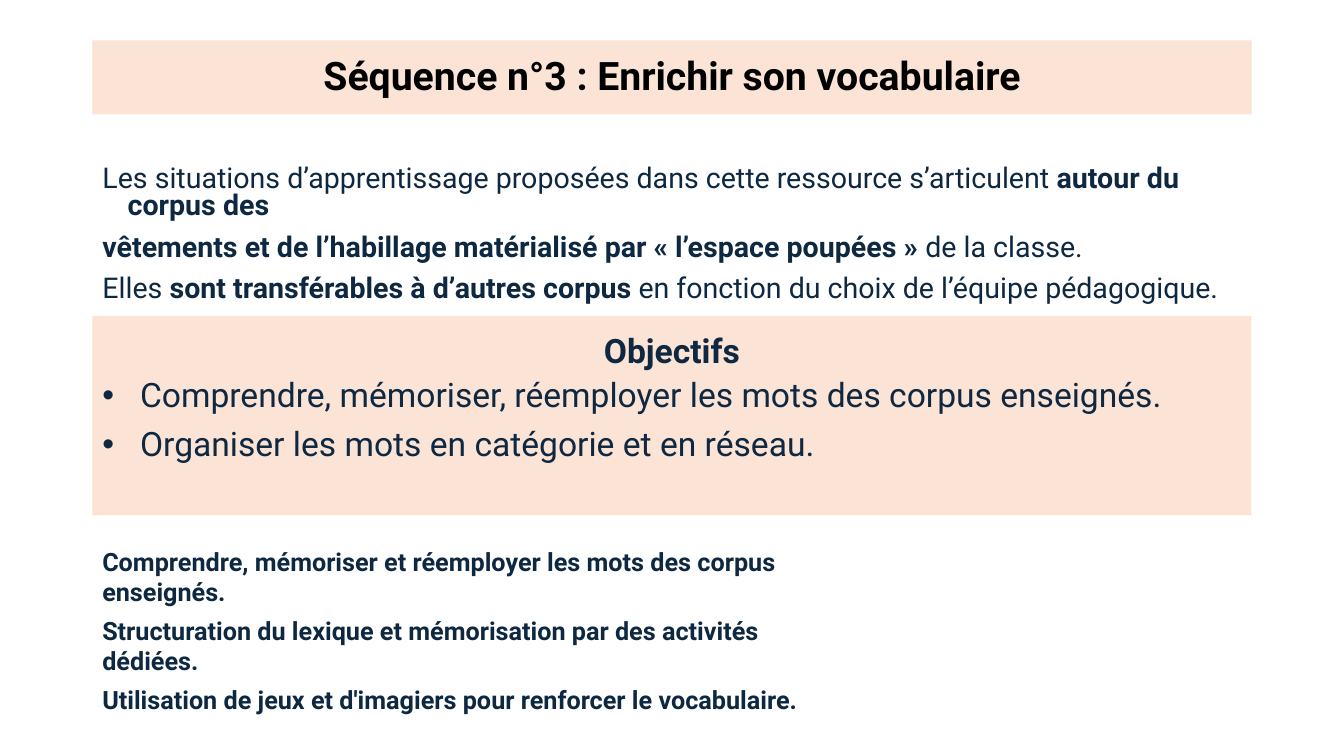
from dataclasses import dataclass
from pptx import Presentation
from pptx.dml.color import RGBColor
from pptx.enum.shapes import MSO_SHAPE
from pptx.enum.text import MSO_ANCHOR, MSO_AUTO_SIZE, PP_ALIGN
from pptx.oxml.xmlchemy import OxmlElement
from pptx.util import Pt

CENTER, LEFT = PP_ALIGN.CENTER, PP_ALIGN.LEFT
TOP, MIDDLE = MSO_ANCHOR.TOP, MSO_ANCHOR.MIDDLE
NO_AUTOFIT = MSO_AUTO_SIZE.NONE
RECTANGLE = MSO_SHAPE.RECTANGLE

# Content: each paragraph is a list of (text, bold) runs
TITLE = [("Séquence n°3 : Enrichir son vocabulaire", True)]
INTRO = [
    [("Les situations d’apprentissage proposées dans cette ressource s’articulent ", False),
     ("autour du corpus des", True)],
    [("vêtements et de l’habillage matérialisé par « l’espace poupées » ", True),
     ("de la classe.", False)],
    [("Elles ", False),
     ("sont transférables à d’autres corpus ", True),
     ("en fonction du choix de l’équipe pédagogique.", False)],
]
GOALS_HEADING = [("Objectifs", True)]
GOALS = [
    [("Comprendre, mémoriser, réemployer les mots des corpus enseignés.", False)],
    [("Organiser les mots en catégorie et en réseau.", False)],
]
METHODS = [
    [("Comprendre, mémoriser et réemployer les mots des corpus enseignés.", True)],
    [("Structuration du lexique et mémorisation par des activités dédiées.", True)],
    [("Utilisation de jeux et d'imagiers pour renforcer le vocabulaire.", True)],
]


@dataclass(frozen=True)
class Theme:
    font: str = "Roboto"
    panel: RGBColor = RGBColor(0xFB, 0xE3, 0xD6)
    black: RGBColor = RGBColor(0, 0, 0)
    navy: RGBColor = RGBColor(0x0E, 0x28, 0x41)
    title_size: float = 28
    intro_size: float = 20.4
    goals_size: float = 24
    methods_size: float = 18


THEME = Theme()

# Layout, in points
PAGE_WIDTH, PAGE_HEIGHT = 960, 540
MARGIN = 66
FULL_WIDTH = PAGE_WIDTH - 2 * MARGIN
METHODS_WIDTH = 546
INSET_X, INSET_Y = 7.2, 3.6
INTRO_INSET_TOP = 28
GOALS_INSET_BOTTOM = 27.4


def place(box, top, width, height, anchor=TOP, inset_top=INSET_Y, inset_bottom=INSET_Y):
    """Position a box and set up its text frame."""
    box.left, box.top, box.width, box.height = Pt(MARGIN), Pt(top), Pt(width), Pt(height)
    frame = box.text_frame
    frame.auto_size = NO_AUTOFIT
    frame.word_wrap = True
    frame.vertical_anchor = anchor
    frame.margin_left = frame.margin_right = Pt(INSET_X)
    frame.margin_top, frame.margin_bottom = Pt(inset_top), Pt(inset_bottom)
    return frame


def fill_panel(box):
    box.fill.solid()
    box.fill.fore_color.rgb = THEME.panel
    box.line.fill.background()


def write(para, runs, size, color, align=LEFT, spacing=1.0, before=0, after=0,
          indent=0, bullet=None):
    """Format one paragraph and add its runs."""
    para.alignment = align
    para.line_spacing = spacing
    para.space_before, para.space_after = Pt(before), Pt(after)
    props = para._p.get_or_add_pPr()
    props.set("marL", str(Pt(indent)))
    props.set("indent", str(Pt(-indent)))
    if bullet:
        face = OxmlElement("a:buFont")
        face.set("typeface", "Arial")
        mark = OxmlElement("a:buChar")
        mark.set("char", bullet)
        props.extend([face, mark])
    else:
        props.append(OxmlElement("a:buNone"))
    for text, bold in runs:
        span = para.add_run()
        span.text = text
        span.font.name = THEME.font
        span.font.size = Pt(size)
        span.font.bold = bold
        span.font.color.rgb = color


def paragraph_at(frame, index):
    return frame.add_paragraph() if index else frame.paragraphs[0]


def main():
    deck = Presentation()
    deck.slide_width, deck.slide_height = Pt(PAGE_WIDTH), Pt(PAGE_HEIGHT)
    page = deck.slides.add_slide(deck.slide_layouts[1])

    # Title band
    title = page.shapes.title
    frame = place(title, 28.8, FULL_WIDTH, 53, MIDDLE)
    fill_panel(title)
    write(frame.paragraphs[0], TITLE, THEME.title_size, THEME.black, CENTER, 0.9)

    # Introduction
    frame = place(page.placeholders[1], 90.7, FULL_WIDTH, 116.6, inset_top=INTRO_INSET_TOP)
    for index, runs in enumerate(INTRO):
        write(paragraph_at(frame, index), runs, THEME.intro_size, THEME.navy,
              spacing=0.8, before=10 if index else 0, indent=18)

    # Objectives panel
    goals = page.shapes.add_shape(RECTANGLE, 0, 0, 0, 0)
    goals.shadow.inherit = False
    fill_panel(goals)
    frame = place(goals, 225.6, FULL_WIDTH, 142.6, MIDDLE, inset_bottom=GOALS_INSET_BOTTOM)
    write(frame.paragraphs[0], GOALS_HEADING, THEME.goals_size, THEME.navy, CENTER, 0.9, before=10)
    for runs, before in zip(GOALS, (6, 3)):
        write(frame.add_paragraph(), runs, THEME.goals_size, THEME.navy, spacing=0.9,
              before=before, after=6, indent=27, bullet="•")

    # Methods
    frame = place(page.shapes.add_textbox(0, 0, 0, 0), 386.6, METHODS_WIDTH, 113)
    for index, runs in enumerate(METHODS):
        write(paragraph_at(frame, index), runs, THEME.methods_size, THEME.navy, after=6)

    deck.save("out.pptx")


if __name__ == "__main__":
    main()
